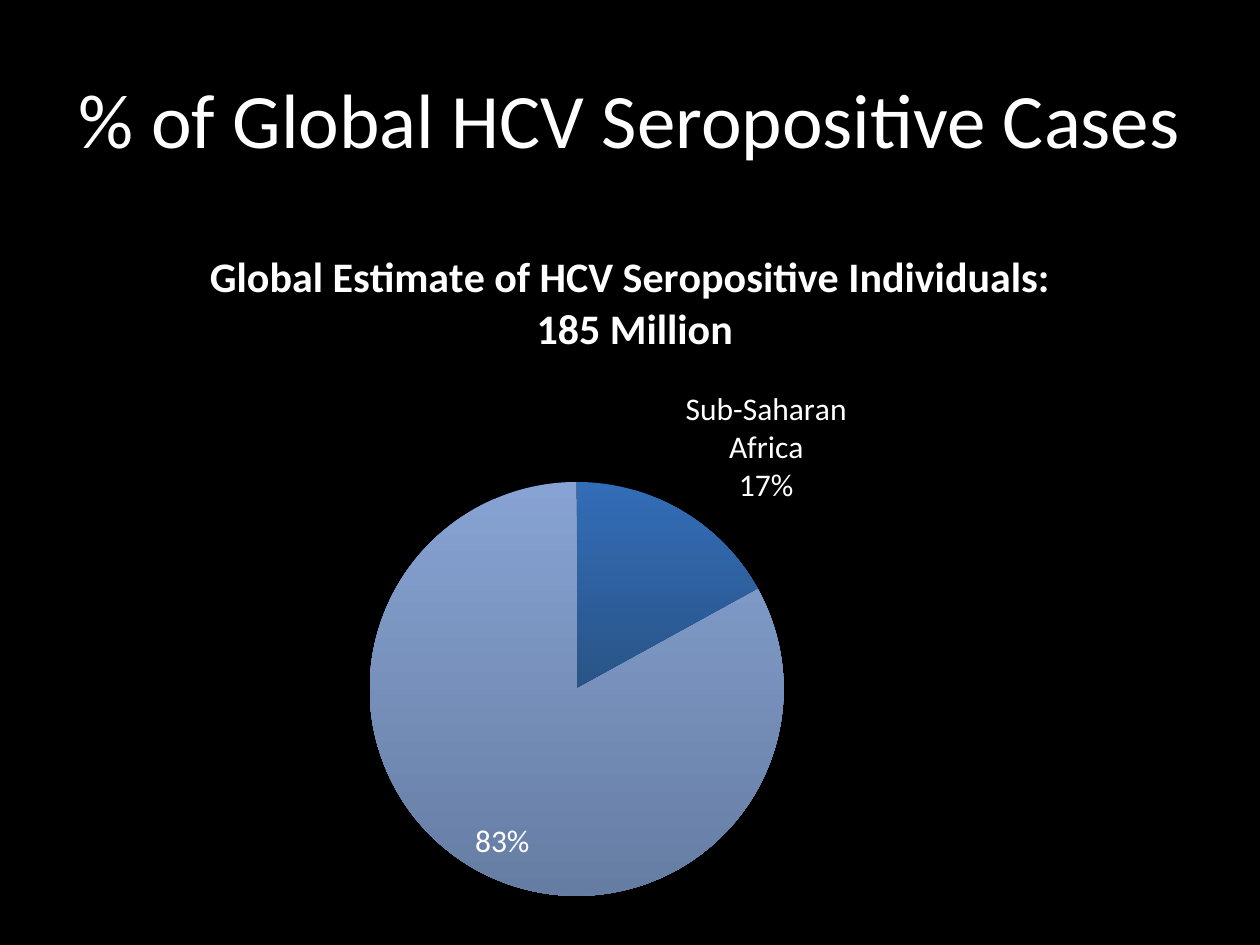
from pptx import Presentation
from pptx.chart.data import CategoryChartData
from pptx.dml.color import RGBColor
from pptx.enum.chart import XL_CHART_TYPE, XL_LABEL_POSITION
from pptx.enum.text import MSO_ANCHOR, PP_ALIGN
from pptx.oxml import parse_xml
from pptx.oxml.ns import nsdecls
from pptx.util import Inches, Pt

BLACK = RGBColor(0x00, 0x00, 0x00)
WHITE = RGBColor(0xFF, 0xFF, 0xFF)
BLUE = RGBColor(0x33, 0x6D, 0xB8)
NAVY = RGBColor(0x29, 0x54, 0x86)
SKY = RGBColor(0x87, 0xA3, 0xD3)
SLATE = RGBColor(0x66, 0x7D, 0xA3)


class Deck:
    """Holds the style and the current slide; boxes are shares of the slide."""

    face = "Calibri"

    def __init__(self, wide, high):
        self.prs = Presentation()
        self.prs.slide_width, self.prs.slide_height = Inches(wide), Inches(high)
        self.slide = self.prs.slides.add_slide(self.prs.slide_layouts[5])
        fill = self.slide.background.fill
        fill.solid()
        fill.fore_color.rgb = BLACK

    def place(self, x, y, w, h):
        wide, high = self.prs.slide_width, self.prs.slide_height
        return int(x * wide), int(y * high), int(w * wide), int(h * high)

    def style(self, font, size, bold=False):
        font.name, font.size, font.bold = self.face, Pt(size), bold
        font.color.rgb = WHITE

    def label(self, frame, text, size, bold=False):
        frame.text = text
        for par in frame.paragraphs:
            par.alignment = PP_ALIGN.CENTER
            self.style(par.font, size, bold)

    def title(self, text, box):
        shape = self.slide.shapes.title
        shape.left, shape.top, shape.width, shape.height = self.place(*box)
        shape.text_frame.vertical_anchor = MSO_ANCHOR.MIDDLE
        self.label(shape.text_frame, text, 44)

    def pie(self, head, slices, box, plot):
        data = CategoryChartData()
        data.categories = [str(n + 1) for n in range(len(slices))]
        data.add_series("Series 1", [part[0] for part in slices])
        chart = self.slide.shapes.add_chart(
            XL_CHART_TYPE.PIE, *self.place(*box), data).chart
        self.style(chart.font, 18)
        chart.has_legend = False
        self.label(chart.chart_title.text_frame, head, 24, True)
        chart.chart_title.include_in_layout = False

        # Slices with a top-to-bottom gradient and their own labels
        pie = chart.plots[0]
        pie.vary_by_categories = True
        for n, (_, text, spot, tones) in enumerate(slices):
            point = pie.series[0].points[n]
            fill = point.format.fill
            fill.gradient()
            fill.gradient_angle = 270
            for stop, tone in zip(fill.gradient_stops, tones):
                stop.color.rgb = tone
            point.format.line.fill.background()
            self.label(point.data_label.text_frame, text, 18)
            point.data_label.position = spot
        self.fix(chart, plot)

    def fix(self, chart, plot):
        """Pin the plot area, given as shares of the chart."""
        area = chart._chartSpace.chart.plotArea
        for old in area.findall("{*}layout"):
            area.remove(old)
        sides = "".join(f'<c:{k} val="{v}"/>' for k, v in zip("xywh", plot))
        area.insert(0, parse_xml(
            f'<c:layout {nsdecls("c")}><c:manualLayout>'
            '<c:layoutTarget val="inner"/><c:xMode val="edge"/>'
            f'<c:yMode val="edge"/>{sides}</c:manualLayout></c:layout>'))


def main():
    deck = Deck(10, 7.5)

    # Pie chart
    deck.pie(
        "Global Estimate of HCV Seropositive Individuals:\n 185 Million",
        [(17, "Sub-Saharan Africa\n17%", XL_LABEL_POSITION.OUTSIDE_END,
          (BLUE, NAVY)),
         (83, "83%", XL_LABEL_POSITION.INSIDE_END, (SKY, SLATE))],
        box=(0.03, 0.24, 0.94, 0.73), plot=(0.28, 0.37, 0.35, 0.6))

    # Heading
    deck.title("% of Global HCV Seropositive Cases", (0.05, 0.04, 0.9, 0.17))
    deck.prs.save("out.pptx")


if __name__ == "__main__":
    main()
